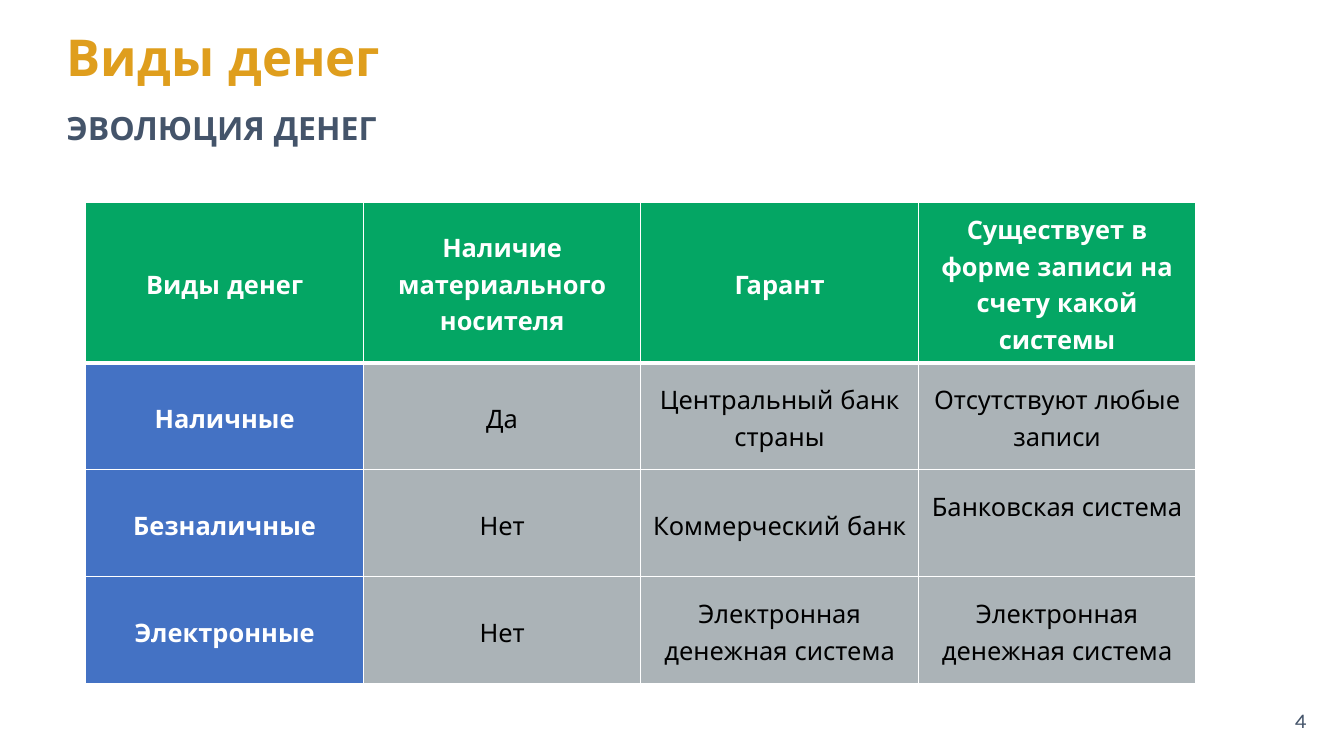
from dataclasses import dataclass

import lxml.etree
import pptx
import pptx.dml.color
import pptx.enum.text
import pptx.oxml.ns
import pptx.util
from pptx.dml.color import RGBColor
from pptx.enum.text import MSO_ANCHOR, PP_ALIGN
from pptx.util import Inches

WHITE = RGBColor(0xFF, 0xFF, 0xFF)
BLACK = RGBColor(0x00, 0x00, 0x00)
GOLD = RGBColor(0xDF, 0x9E, 0x1D)
SLATE = RGBColor(0x44, 0x54, 0x6A)
GREEN = RGBColor(0x04, 0xA6, 0x64)
BLUE = RGBColor(0x44, 0x72, 0xC4)
GRAY = RGBColor(0xAB, 0xB3, 0xB7)

HEADING_FONT = "Quicksand"
NUMBER_FONT = "Karla"


@dataclass(frozen=True)
class TextStyle:
    font: str
    size: float
    color: RGBColor
    bold: bool = False
    align: PP_ALIGN = PP_ALIGN.LEFT
    spacing: float = 1.0


@dataclass(frozen=True)
class Label:
    text: str
    left: float
    top: float
    width: float
    height: float
    anchor: MSO_ANCHOR
    style: TextStyle


@dataclass(frozen=True)
class CellLook:
    fill: RGBColor
    style: TextStyle
    bottom_border: float = 1


LABELS = [
    Label("ЭВОЛЮЦИЯ ДЕНЕГ", 0.62, 1.04, 13.23, 0.76, MSO_ANCHOR.MIDDLE,
          TextStyle(HEADING_FONT, 25.2, SLATE, True, spacing=0.9)),
    Label("Виды денег", 0.62, 0.31, 6.29, 0.82, MSO_ANCHOR.TOP,
          TextStyle(HEADING_FONT, 40, GOLD, True, spacing=0.9)),
    Label("4", 13.51, 7.66, 0.89, 0.44, MSO_ANCHOR.MIDDLE,
          TextStyle(NUMBER_FONT, 16.4, SLATE, align=PP_ALIGN.RIGHT)),
]

STRONG = TextStyle(HEADING_FONT, 20, WHITE, True, PP_ALIGN.CENTER, 1.15)
REGULAR = TextStyle(HEADING_FONT, 20, BLACK, False, PP_ALIGN.CENTER, 1.15)
HEADER_LOOK = CellLook(GREEN, STRONG, 3)
KIND_LOOK = CellLook(BLUE, STRONG)
VALUE_LOOK = CellLook(GRAY, REGULAR)

MONEY_KINDS = [
    ["Виды денег", "Наличие материального носителя", "Гарант",
     "Существует в форме записи на счету какой системы"],
    ["Наличные", "Да", "Центральный банк страны", "Отсутствуют любые записи"],
    ["Безналичные", "Нет", "Коммерческий банк", "Банковская система"],
    ["Электронные", "Нет", "Электронная денежная система",
     "Электронная денежная система"],
]
ROW_HEIGHTS = [1.76, 1.17, 1.17, 1.17]
RAISED_CELL = (2, 3)


def write_text(frame: pptx.text.text.TextFrame, text: str, style: TextStyle) -> None:
    frame.text = text
    frame.word_wrap = True
    paragraph = frame.paragraphs[0]
    paragraph.alignment = style.align
    paragraph.line_spacing = style.spacing
    font = paragraph.runs[0].font
    font.name = style.font
    font.size = pptx.util.Pt(style.size)
    font.bold = style.bold
    font.color.rgb = style.color


def add_label(slide: pptx.slide.Slide, label: Label) -> None:
    box = slide.shapes.add_textbox(Inches(label.left), Inches(label.top),
                                   Inches(label.width), Inches(label.height))
    frame = box.text_frame
    frame.margin_left = frame.margin_right = Inches(0.11)
    frame.vertical_anchor = label.anchor
    write_text(frame, label.text, label.style)


def add_borders(cell: pptx.table._Cell, bottom: float) -> None:
    properties = cell._tc.get_or_add_tcPr()
    qn = pptx.oxml.ns.qn
    for side, width in (("L", 1), ("R", 1), ("T", 1), ("B", bottom)):
        border = lxml.etree.SubElement(properties, qn(f"a:ln{side}"),
                                       w=str(pptx.util.Pt(width)))
        solid = lxml.etree.SubElement(border, qn("a:solidFill"))
        lxml.etree.SubElement(solid, qn("a:srgbClr"), val=str(WHITE))


def cell_look(row: int, column: int) -> CellLook:
    if row == 0:
        return HEADER_LOOK
    return KIND_LOOK if column == 0 else VALUE_LOOK


def add_money_table(slide: pptx.slide.Slide) -> None:
    table = slide.shapes.add_table(
        len(MONEY_KINDS), len(MONEY_KINDS[0]), Inches(0.94), Inches(2.21),
        Inches(12.14), Inches(sum(ROW_HEIGHTS))).table
    table.horz_banding = False
    table.first_col = True
    for row, (height, texts) in enumerate(zip(ROW_HEIGHTS, MONEY_KINDS)):
        table.rows[row].height = Inches(height)
        for column, text in enumerate(texts):
            cell = table.cell(row, column)
            look = cell_look(row, column)
            cell.margin_left = cell.margin_right = Inches(0.07)
            cell.margin_top = 0
            cell.margin_bottom = Inches(0.4 if (row, column) == RAISED_CELL else 0)
            cell.vertical_anchor = MSO_ANCHOR.MIDDLE
            add_borders(cell, 3 if row == 0 else look.bottom_border)
            cell.fill.solid()
            cell.fill.fore_color.rgb = look.fill
            write_text(cell.text_frame, text, look.style)


def main() -> None:
    presentation = pptx.Presentation()
    presentation.slide_width = Inches(14.7)
    presentation.slide_height = Inches(8.27)
    slide = presentation.slides.add_slide(presentation.slide_layouts[6])
    for label in LABELS:
        add_label(slide, label)
    add_money_table(slide)
    presentation.save("out.pptx")


if __name__ == "__main__":
    main()
